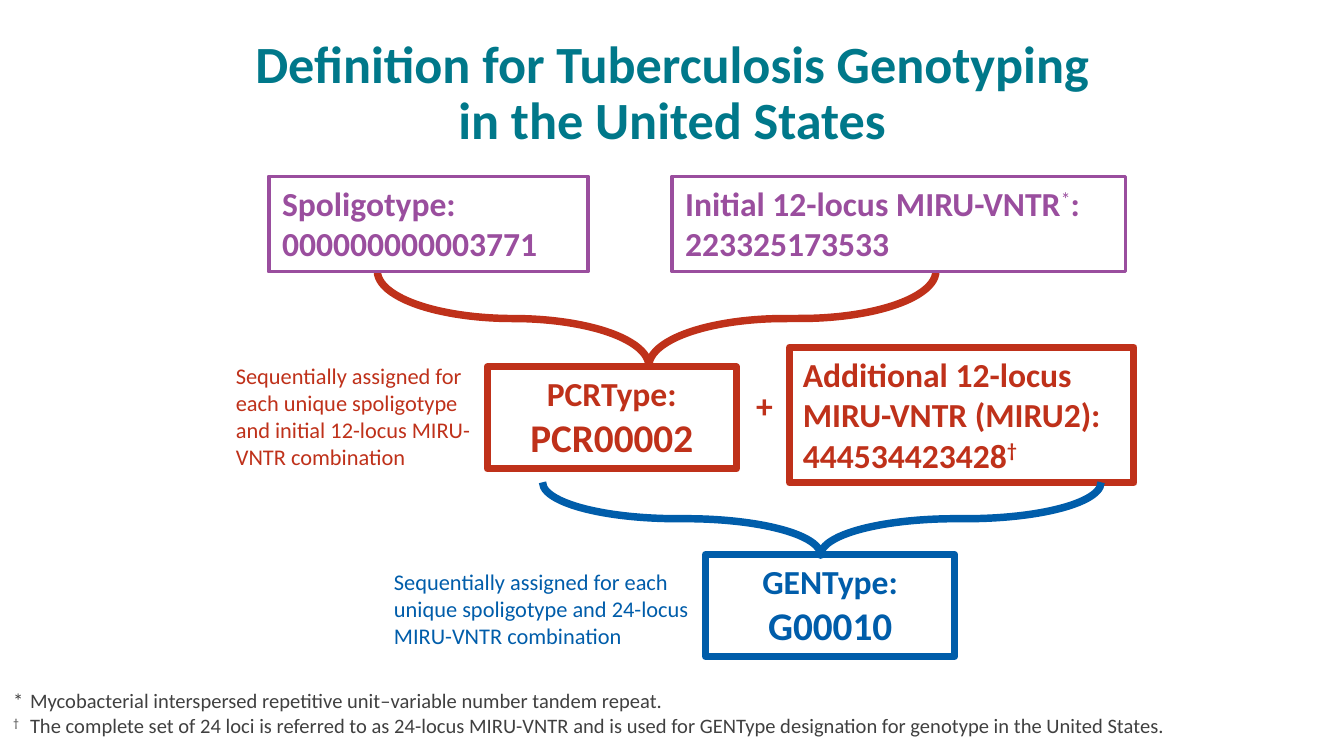
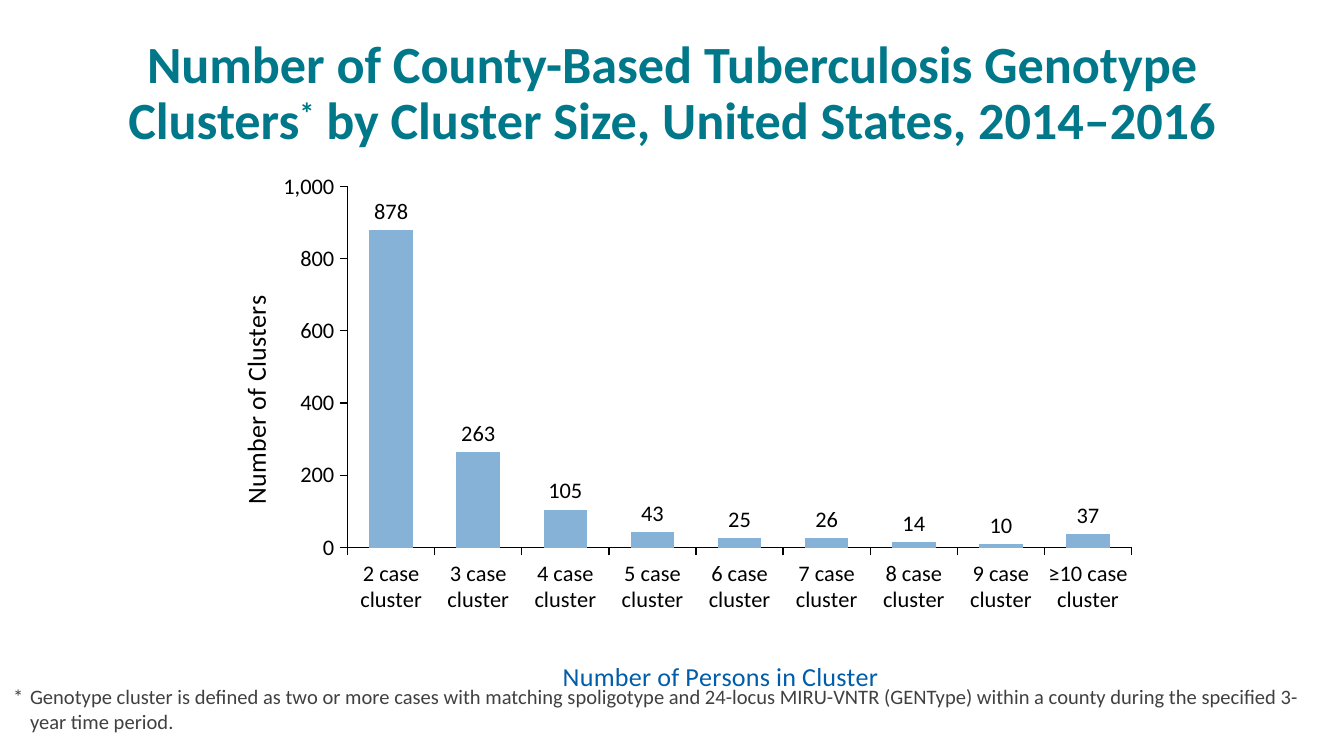
from lxml import etree
from pptx import Presentation
from pptx import util as u
from pptx.chart.data import CategoryChartData
from pptx.dml.color import RGBColor
from pptx.enum import chart as ch, shapes, text

PX = 9525  # EMU per px, 96 px to the inch
FONT = "Calibri"
COLORS = {
    "title": "00788A", "purple": "9A4E9E", "red": "BF311A", "blue": "005DAA",
    "note": "404040", "bar": "86B2D8", "black": "000000",
}
TITLE_BOX = (48, 22, 864, 90)
LEFT, CENTER = text.PP_ALIGN.LEFT, text.PP_ALIGN.CENTER


def write(shape, copy, size, color, bold=False, align=LEFT):
    """Fill a shape: newline = paragraph, | = line break, ^ around a superscript."""
    frame = shape.text_frame
    frame.word_wrap = True
    frame.vertical_anchor = text.MSO_ANCHOR.TOP
    frame.text = "\n".join("" for _ in copy.split("\n"))
    for paragraph, content in zip(frame.paragraphs, copy.split("\n")):
        paragraph.alignment = align
        for number, line in enumerate(content.split("|")):
            if number:
                paragraph.add_line_break()
            for i, piece in enumerate(line.split("^")):
                if not piece:
                    continue
                run = paragraph.add_run()
                run.text = piece
                run.font.name, run.font.size, run.font.bold = FONT, u.Pt(size), bold
                run.font.color.rgb = RGBColor.from_string(COLORS[color])
                if i % 2:
                    run.font._element.set("baseline", "30000")
    return frame.paragraphs


def place(element, index, **fractions):
    """Give a chart part a manual layout, in fractions of the chart."""
    for old in element.findall("{*}layout"):
        element.remove(old)
    ns = "{%s}" % etree.QName(element).namespace
    layout = etree.Element(ns + "layout")
    manual = etree.SubElement(layout, ns + "manualLayout")
    if "w" in fractions:
        etree.SubElement(manual, ns + "layoutTarget", val="inner")
    for mode in ("xMode", "yMode"):
        etree.SubElement(manual, ns + mode, val="edge")
    for key, value in fractions.items():
        etree.SubElement(manual, ns + key, val=str(value))
    element.insert(index, layout)


prs = Presentation()
prs.slide_width, prs.slide_height = 960 * PX, 540 * PX

# Titles and footnotes of both slides
pages = [
    ("Definition for Tuberculosis Genotyping|in the United States", 487,
     "*\tMycobacterial interspersed repetitive unit–variable number tandem repeat.\n"
     "^†\t^The complete set of 24 loci is referred to as 24-locus MIRU-VNTR and is used "
     "for GENType designation for genotype in the United States."),
    ("Number of County-Based Tuberculosis Genotype Clusters^*^ by Cluster Size, "
     "United States, 2014–2016", 484,
     "*\tGenotype cluster is defined as two or more cases with matching spoligotype and "
     "24-locus MIRU-VNTR (GENType) within a county during the specified 3-year time period."),
]
slides = []
for heading, footnote_top, footnote in pages:
    slide = prs.slides.add_slide(prs.slide_layouts[6])
    slides.append(slide)
    title = slide.shapes.add_textbox(*[n * PX for n in TITLE_BOX])
    for paragraph in write(title, heading, 28, "title", True, CENTER):
        paragraph.line_spacing = u.Pt(30)
    title.text_frame.vertical_anchor = text.MSO_ANCHOR.BOTTOM
    notes = slide.shapes.add_textbox(0, footnote_top * PX, 960 * PX, 47 * PX)
    for number, paragraph in enumerate(write(notes, footnote, 11, "note")):
        properties = paragraph._p.get_or_add_pPr()
        properties.set("marL", str(12 * PX))
        properties.set("indent", str(-12 * PX))
        if number:
            paragraph.line_spacing, paragraph.space_before = u.Pt(11), u.Pt(2)
definition, clusters = slides

# Slide 1: boxes and the braces that join them, from back to front
# (place, colour, line width, alignment, text) or, for a brace, its point's position
diagram = [
    ((435, 28, 68, 399), "red", 4, None, 0.486),
    ((480, 126, 324, 68), "purple", 2, LEFT, "Initial 12-locus MIRU-VNTR^*^:|223325173533"),
    ((192, 126, 228, 68), "purple", 2, LEFT, "Spoligotype: 000000000003771"),
    ((348, 262, 178, 73), "red", 3.75, CENTER, "PCRType:|PCR00002"),
    ((564, 248, 246, 97), "red", 3.75, LEFT,
     "Additional 12-locus MIRU-VNTR (MIRU2): 444534423428^†^"),
    ((561, 171, 52, 399), "blue", 4, None, 0.498),
    ((504, 396, 178, 73), "blue", 3.75, CENTER, "GENType:\nG00010"),
]
for box, color, width, align, content in diagram:
    is_brace = align is None
    kind = shapes.MSO_SHAPE.LEFT_BRACE if is_brace else shapes.MSO_SHAPE.RECTANGLE
    part = definition.shapes.add_shape(kind, *[n * PX for n in box])
    part.shadow.inherit = False
    part.fill.background()
    part.line.color.rgb = RGBColor.from_string(COLORS[color])
    part.line.width = u.Pt(width)
    if is_brace:
        part.rotation = 270
        part.adjustments[0], part.adjustments[1] = 1.854, content
        continue
    paragraphs = write(part, content, 18, color, True, align)
    if align == CENTER:  # the code under the type name is larger
        paragraphs[-1].runs[-1].font.size = u.Pt(21)
    if color == "purple" and "^" in content:
        paragraphs[0].runs[1].font.bold = False

# Slide 1: plus sign and explanations
for box, color, size, bold, align, content in [
    ((528, 270, 36, 38), "red", 18, True, CENTER, "+"),
    ((159, 254, 190, 87), "red", 12, False, LEFT,
     "Sequentially assigned for each unique spoligotype and initial 12-locus "
     "MIRU-VNTR combination"),
    ((272, 401, 232, 68), "blue", 12, False, LEFT,
     "Sequentially assigned for each unique spoligotype and 24-locus MIRU-VNTR combination"),
]:
    label = definition.shapes.add_textbox(*[n * PX for n in box])
    write(label, content, size, color, bold, align)

# Slide 2: column chart
data = CategoryChartData(number_format="#,##0")
data.categories = [f"{size} case cluster" for size in [*range(2, 10), "≥10"]]
data.add_series("Series 1", [878, 263, 105, 43, 25, 26, 14, 10, 37])
chart = clusters.shapes.add_chart(
    ch.XL_CHART_TYPE.COLUMN_CLUSTERED, *[n * PX for n in (139, 118, 683, 383)], data).chart
chart.has_legend = chart.has_title = False
chart.font.name, chart.font.size = FONT, u.Pt(12)
chart.font.color.rgb = RGBColor.from_string(COLORS["black"])

plot = chart.plots[0]
plot.gap_width, plot.vary_by_categories = 100, False
bars = plot.series[0].format.fill
bars.solid()
bars.fore_color.rgb = RGBColor.from_string(COLORS["bar"])
plot.has_data_labels = True
values = plot.data_labels
values.show_value, values.position = True, ch.XL_LABEL_POSITION.OUTSIDE_END
values.font.name, values.font.size = FONT, u.Pt(12)
values.font.color.rgb = RGBColor.from_string(COLORS["black"])

# Slide 2: axes
scale = chart.value_axis
scale.minimum_scale, scale.maximum_scale, scale.major_unit = 0, 1000, 200
scale.tick_labels.number_format = "#,##0"
scale.tick_labels.number_format_is_linked = False
for axis, name, color, x, y in [
    (chart.category_axis, "Number of Persons in Cluster", "blue", 0.38, 0.92),
    (scale, "Number of Clusters", "black", 0.04, 0.24),
]:
    axis.has_major_gridlines = False
    axis.major_tick_mark = ch.XL_TICK_MARK.OUTSIDE
    axis.minor_tick_mark = ch.XL_TICK_MARK.NONE
    axis.format.line.color.rgb = RGBColor.from_string(COLORS["black"])
    axis.format.line.width = u.Pt(0.75)
    axis.tick_labels.font.name, axis.tick_labels.font.size = FONT, u.Pt(12)
    caption = axis.axis_title.text_frame
    caption.text = name
    font = caption.paragraphs[0].runs[0].font
    font.name, font.size, font.bold = FONT, u.Pt(14), False
    font.color.rgb = RGBColor.from_string(COLORS[color])
    if axis is scale:
        caption._bodyPr.set("rot", "-5400000")
    place(axis.axis_title._element, 1, x=x, y=y)
place(chart._chartSpace.chart.plotArea, 0, x=0.16, y=0.04, w=0.82, h=0.68)

prs.save("out.pptx")
